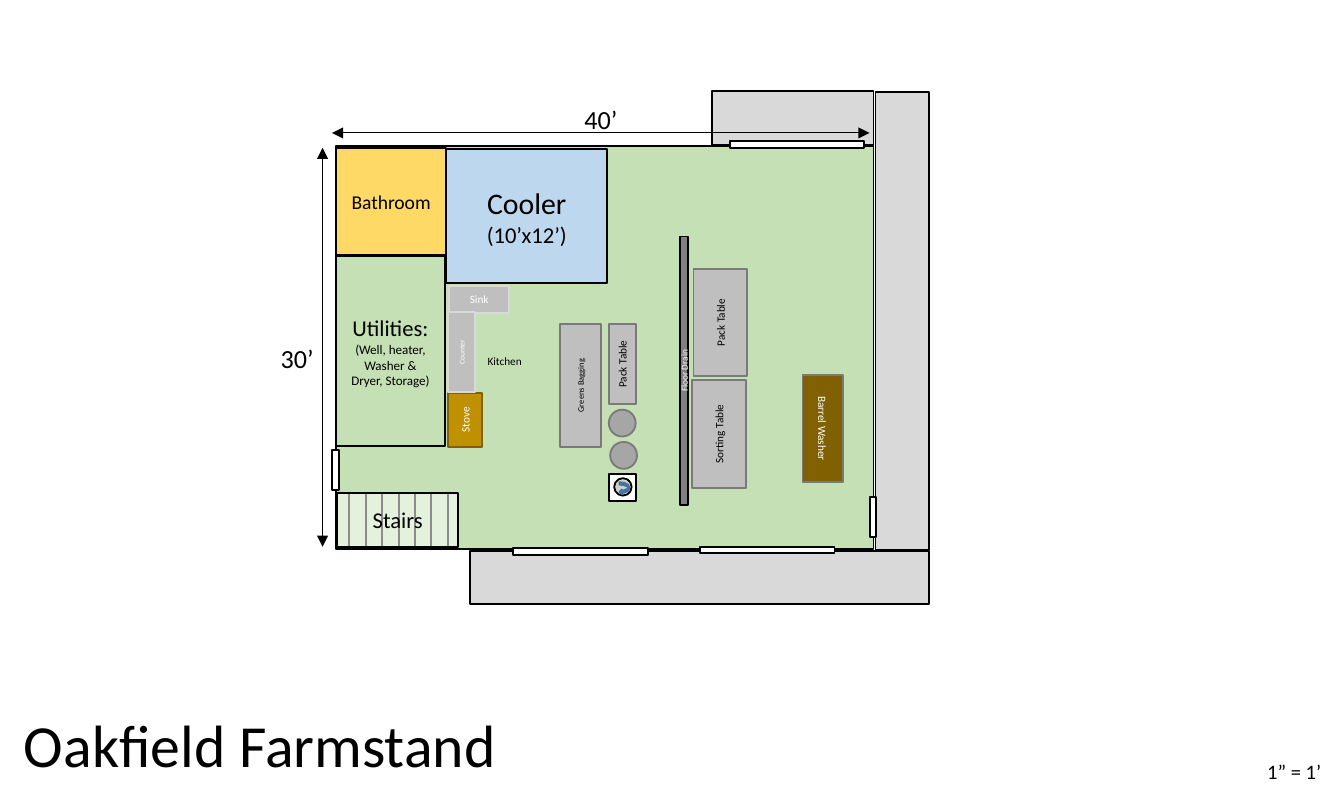
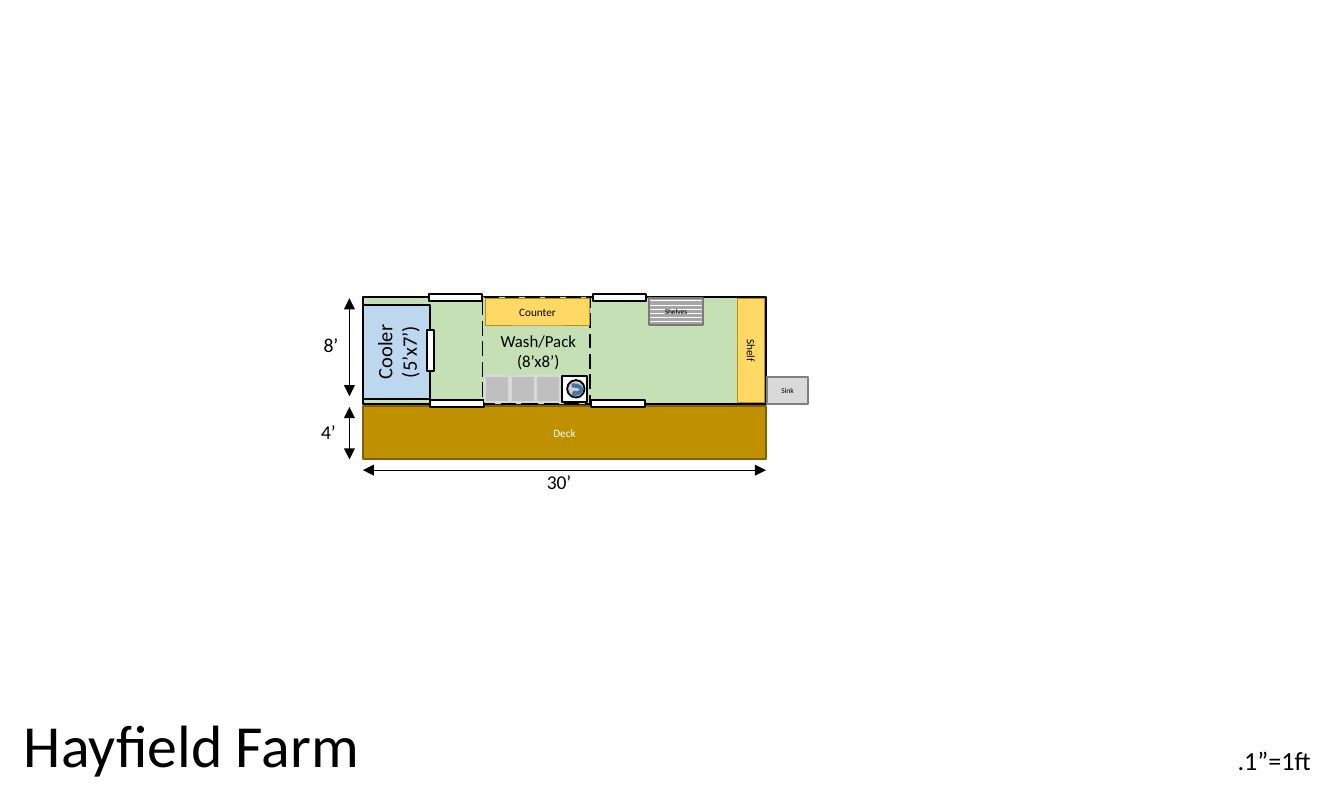
from dataclasses import dataclass

from lxml.etree import SubElement
from pptx import Presentation
from pptx.dml.color import RGBColor
from pptx.enum.dml import MSO_LINE, MSO_PATTERN
from pptx.enum.shapes import MSO_CONNECTOR, MSO_SHAPE as Shape
from pptx.enum.text import MSO_ANCHOR, MSO_AUTO_SIZE, PP_ALIGN
from pptx.oxml.ns import qn
from pptx.util import Pt

PX = 9144  # EMU: 100 px to the inch, 10 px to the foot on the plans


@dataclass(frozen=True)
class Theme:
    font: str = "Calibri"
    black: str = "000000"
    white: str = "FFFFFF"
    floor: str = "C5E0B4"
    path_grey: str = "D9D9D9"
    table: str = "BFBFBF"
    barrel: str = "A6A6A6"
    basin: str = "D0CECE"
    edge: str = "7A7A7A"
    drain: str = "808080"
    cold: str = "BDD7EE"
    yellow: str = "FFD966"
    wood: str = "BF9000"
    dark_wood: str = "806000"
    water: str = "5B9BD5"
    water_edge: str = "43739E"
    title: float = 32
    room: float = 16
    dimension: float = 14
    area: float = 12.1
    scale: float = 11
    small: float = 10.5
    zone: float = 9
    note: float = 7
    item: float = 6
    narrow: float = 5
    thin: float = 4.5
    micro: float = 4


T = Theme()


def rgb(value):
    return RGBColor.from_string(value)


def place(*lengths):
    return [round(n * PX) for n in lengths]


def write(tf, text, size=T.item, color=T.black, align=PP_ALIGN.LEFT):
    """Fill the first paragraph, or add one if it is already used."""
    p = tf.paragraphs[0] if not tf.text else tf.add_paragraph()
    p.alignment = align
    r = p.add_run()
    r.text = text
    r.font.name, r.font.size = T.font, Pt(size)
    r.font.color.rgb = rgb(color)


def block(shapes, x, y, w, h, *lines, fill=T.floor, line=T.black, weight=1,
          rot=0, color=T.black, kind=Shape.RECTANGLE):
    """Outlined shape; each of lines is a (text, size) pair, centred."""
    sp = shapes.add_shape(kind, *place(x, y, w, h))
    sp.shadow.inherit = False
    sp.rotation = rot
    if fill:
        sp.fill.solid()
        sp.fill.fore_color.rgb = rgb(fill)
    else:
        sp.fill.background()
    sp.line.color.rgb = rgb(line)
    sp.line.width = Pt(weight)
    tf = sp.text_frame
    tf.word_wrap = True
    tf.vertical_anchor = MSO_ANCHOR.MIDDLE
    for text, size in lines:
        write(tf, text, size=size, color=color, align=PP_ALIGN.CENTER)
    return sp


def table(shapes, x, y, w, h, text, size=T.item, rot=270):
    block(shapes, x, y, w, h, (text, size), fill=T.table, line=T.edge, rot=rot)


def doors(shapes, *boxes):
    for box in boxes:
        block(shapes, *box, fill=T.white)


def label(shapes, x, y, w, h, *lines, wrap=False, align=PP_ALIGN.LEFT):
    tf = shapes.add_textbox(*place(x, y, w, h)).text_frame
    tf.word_wrap = wrap
    tf.auto_size = MSO_AUTO_SIZE.SHAPE_TO_FIT_TEXT
    for text, size in lines:
        write(tf, text, size=size, align=align)


def dimension_line(shapes, x1, y1, x2, y2):
    cx = shapes.add_connector(MSO_CONNECTOR.STRAIGHT, *place(x1, y1, x2, y2))
    cx.line.color.rgb = rgb(T.black)
    cx.line.width = Pt(0.5)
    ln = cx.line._get_or_add_ln()
    for end in ("a:headEnd", "a:tailEnd"):
        SubElement(ln, qn(end), type="triangle")
    SubElement(cx._element.spPr, qn("a:effectLst"))


def hand_sink(shapes, x, y, size):
    g = shapes.add_group_shape().shapes
    block(g, x, y, size, size, fill=T.white)
    block(g, x + 4, y + 3, 13, 13, fill=T.basin, kind=Shape.OVAL)
    block(g, x + 8, y + 6, 7, 9, fill=T.water, line=T.water_edge,
          kind=Shape.CURVED_LEFT_ARROW)


def stairs(shapes, x, y, w, h):
    g = shapes.add_group_shape().shapes
    tread = 12.2
    for i in range(6):
        block(g, x + 9 + i * tread, y, tread, h, fill=None)
    sp = block(g, x, y, w, h, ("Stairs", T.area), fill=T.white)
    clr = sp._element.spPr.find(qn("a:solidFill")).find(qn("a:srgbClr"))
    SubElement(clr, qn("a:alpha"), val="55000")


def plan_slide(prs, title, title_width):
    s = prs.slides.add_slide(prs.slide_layouts[6]).shapes
    label(s, 8, 522, title_width, 64, (title, T.title), wrap=True)
    return s


def farmstand(prs):
    s = plan_slide(prs, "Oakfield Farmstand", 411)
    block(s, 250, 109, 400, 300)
    block(s, 530, 68, 120, 40, fill=T.path_grey)
    block(s, 501, 219, 341, 40, fill=T.path_grey, rot=270)
    label(s, 199, 250, 45, 34, ("30’", T.dimension))
    dimension_line(s, 247, 99, 647, 99)
    dimension_line(s, 240, 110, 240, 407)
    label(s, 425, 72, 45, 34, ("40’", T.dimension))
    doors(s, (247, 335, 5, 30))
    hand_sink(s, 453, 353, 20)
    table(s, 386, 272, 92, 30, "Greens Bagging", T.thin)
    doors(s, (543, 105, 100, 5), (647, 370, 5, 30))
    table(s, 496, 220, 80, 40, "Pack Table")
    table(s, 433, 261, 60, 20, "Pack Table")
    label(s, 933, 560, 61, 29, ("1” = 1’", T.scale))
    block(s, 572, 304, 80, 30, ("Barrel Washer", T.item), fill=T.dark_wood,
          line=T.edge, rot=90, color=T.white)
    block(s, 409, 273, 200, 6, ("Floor Drain", T.narrow), fill=T.drain,
          rot=270, color=T.white)
    block(s, 350, 410, 341, 40, fill=T.path_grey)
    doors(s, (521, 407, 100, 5), (382, 408, 100, 5))
    table(s, 495, 303, 80, 40, "Sorting Table")
    stairs(s, 251, 367, 90, 40)
    block(s, 250, 110, 82, 80, ("Bathroom", T.small), fill=T.yellow)
    block(s, 332, 111, 120, 100, ("Cooler", T.room), ("(10’x12’)", T.area),
          fill=T.cold)
    block(s, 250, 191, 81, 141, ("Utilities:", T.area),
          ("(Well, heater, Washer & Dryer, Storage)", T.note))
    for x, y in ((453, 305), (454, 329)):
        block(s, x, y, 20, 20, fill=T.barrel, line=T.edge, kind=Shape.OVAL)
    block(s, 326, 300, 40, 25, ("Stove", T.item), fill=T.wood,
          line=T.dark_wood, rot=270, color=T.white)
    block(s, 334, 213, 45, 20, ("Sink", T.item), fill=T.table,
          line=T.path_grey, color=T.white)
    block(s, 314, 252, 59, 20, ("Counter", T.micro), fill=T.table,
          line=T.path_grey, rot=270, color=T.white)
    label(s, 353, 259, 46, 20, ("Kitchen", T.item))


def wash_trailer(prs):
    s = plan_slide(prs, "Hayfield Farm", 285)
    block(s, 270, 221, 300, 80)
    zone = block(s, 359, 221, 80, 80)
    zone.line.dash_style = MSO_LINE.LONG_DASH
    label(s, 397, 345, 40, 29, ("30’", T.small))
    label(s, 911, 549, 76, 34, (".1”=1ft", T.dimension))
    dimension_line(s, 270, 350, 570, 350)
    dimension_line(s, 260, 303, 260, 342)
    block(s, 260, 237, 70, 50, ("Cooler (5’x7’)", T.scale), fill=T.cold,
          rot=270)
    label(s, 354, 241, 93, 61, ("Wash/Pack", T.zone), ("(8’x8’)", T.zone),
          wrap=True, align=PP_ALIGN.CENTER)
    doors(s, (318, 246, 5, 30), (319, 219, 40, 5))
    block(s, 270, 302, 300, 40, ("Deck", T.item), fill=T.wood,
          line=T.dark_wood, color=T.white)
    label(s, 229, 308, 31, 28, ("4’", T.small))
    doors(s, (320, 298, 40, 5), (440, 298, 40, 5), (441, 219, 40, 5))
    shelves = block(s, 483, 222, 40, 20, ("Shelves", T.micro), line=T.edge)
    shelves.fill.patterned()
    shelves.fill.pattern = MSO_PATTERN.DARK_HORIZONTAL
    shelves.fill.fore_color.rgb = rgb(T.barrel)
    shelves.fill.back_color.rgb = rgb(T.white)
    block(s, 571, 281, 30, 20, ("Sink", T.micro), fill=T.path_grey,
          line=T.drain)
    block(s, 520, 251, 78, 20, ("Shelf", T.item), fill=T.yellow, line=T.wood,
          weight=0.5, rot=90)
    wash_bays = s.add_group_shape().shapes
    for i in range(3):
        block(wash_bays, 361 + 19 * i, 280, 18, 19, fill=T.table,
              line=T.path_grey)
    hand_sink(s, 418, 280, 19)
    block(s, 361, 222, 78, 20, ("Counter", T.item), fill=T.yellow,
          line=T.wood, weight=0.5)
    dimension_line(s, 260, 222, 260, 295)
    label(s, 231, 243, 31, 28, ("8’", T.small))


def main():
    prs = Presentation()
    prs.slide_width, prs.slide_height = place(1000, 600)
    farmstand(prs)
    wash_trailer(prs)
    prs.save("out.pptx")


if __name__ == "__main__":
    main()
